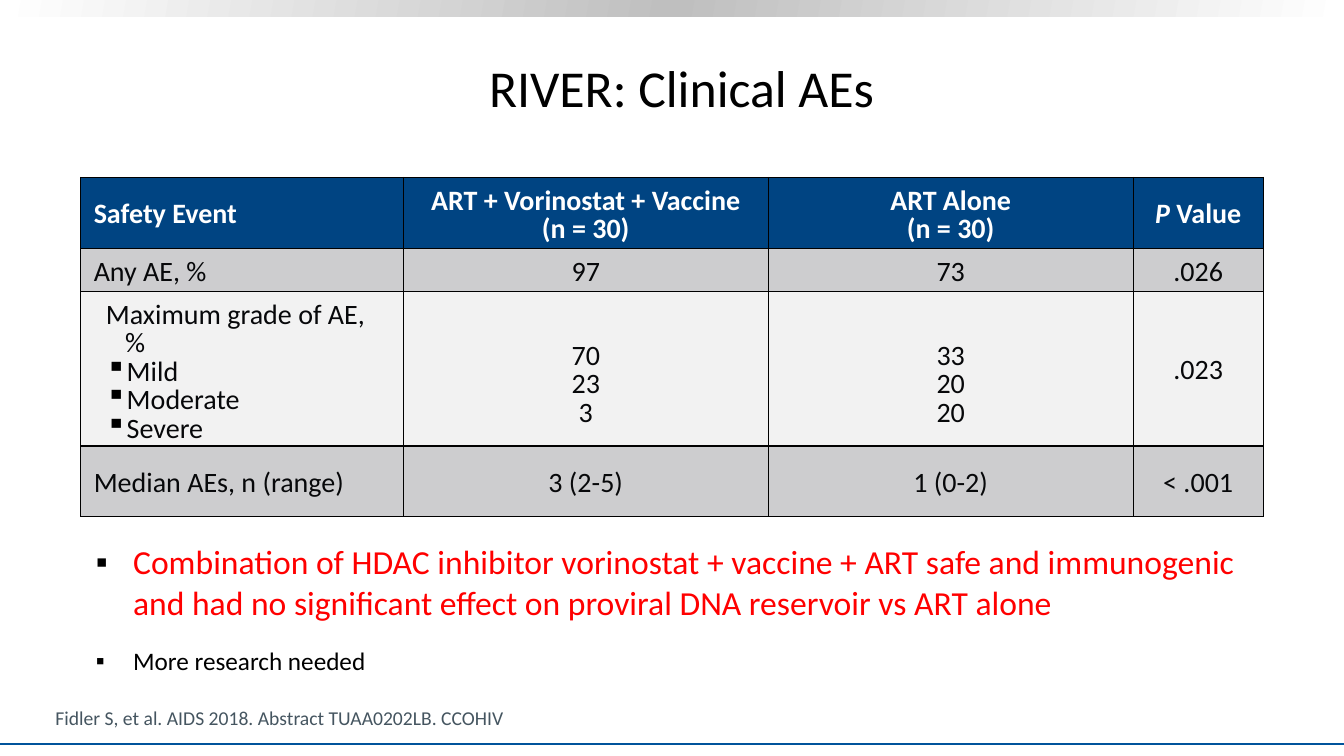
from copy import deepcopy

from lxml.etree import SubElement
from pptx import Presentation
from pptx.dml.color import RGBColor
from pptx.enum.shapes import MSO_CONNECTOR, MSO_SHAPE
from pptx.enum.text import MSO_ANCHOR, MSO_AUTO_SIZE, PP_ALIGN
from pptx.oxml.ns import qn
from pptx.util import Inches, Pt

INK = {
    "black": "000000", "white": "FFFFFF", "silver": "BFBFBF", "rule": "00539B",
    "head": "004482", "cell": "07080A", "dark": "CDCDCF", "light": "F2F2F2",
    "red": "FF0000", "slate": "455560",
}
COLS = [3.2, 3.62, 3.62, 1.29]
ROWS = [0.7, 0.42, 1.53, 0.7]
FILLS = ["head", "dark", "light", "dark"]
GRADE = 2  # row with the grades of AE
LINE = 0.28  # height of one line in the table
DATA = [
    ["Safety Event", "ART + Vorinostat + Vaccine (n = 30)", "ART Alone\n(n = 30)", "P Value"],
    ["Any AE, %", "97", "73", ".026"],
    ["Maximum grade of AE, %\nMild\nModerate\nSevere", "70\n23\n3", "33\n20\n20", ".023"],
    ["Median AEs, n (range)", "3 (2-5)", "1 (0-2)", "< .001"],
]


def color(name):
    return RGBColor.from_string(INK[name])


def put(para, text, size=20, ink="black", bold=False, italic=False,
        align=PP_ALIGN.LEFT, space=None, before=0, after=0, indent=None, bullet=False):
    """Add a run to a paragraph and format both."""
    para.alignment = align
    para.space_before, para.space_after = Pt(before), Pt(after)
    if space:
        para.line_spacing = space
    props = para._p.get_or_add_pPr()
    if indent:
        left, first = indent
        props.set("marL", str(Inches(left)))
        props.set("indent", str(Inches(first)))
    if bullet:
        tint = SubElement(props, qn("a:buClr"))
        SubElement(tint, qn("a:srgbClr")).set("val", INK["black"])
        SubElement(props, qn("a:buChar")).set("char", "▪")
    run = para.add_run()
    run.text = text
    font = run.font
    font.name, font.size, font.bold, font.italic = "Calibri", Pt(size), bold, italic
    font.color.rgb = color(ink)


def lines(frame, count):
    """Return the given number of paragraphs of a frame."""
    return [frame.paragraphs[0]] + [frame.add_paragraph() for _ in range(count - 1)]


def place(shape, box):
    shape.left, shape.top, shape.width, shape.height = map(Inches, box)


def edge(cell):
    """Draw the four borders of a cell."""
    props = cell._tc.get_or_add_tcPr()
    for spot, side in enumerate(["lnL", "lnR", "lnT", "lnB"]):
        line = SubElement(props, qn("a:" + side), w=str(Pt(0.96)))
        fill = SubElement(line, qn("a:solidFill"))
        SubElement(fill, qn("a:srgbClr")).set("val", INK["black"])
        props.insert(spot, line)


def add_bands(slide, box):
    """Gradient bar at the top and rule at the foot."""
    left, top, width, height = box
    bar = slide.shapes.add_shape(MSO_SHAPE.RECTANGLE, *map(Inches, (left, top, width, 0.16)))
    bar.shadow.inherit = False
    bar.line.fill.background()
    bar.fill.gradient()
    bar.fill.gradient_angle = 350
    stops = bar._element.spPr.find(".//" + qn("a:gsLst"))
    stops.append(deepcopy(stops[0]))
    for stop, spot, ink in zip(bar.fill.gradient_stops, [0, 0.5, 1], ["white", "silver", "white"]):
        stop.position = spot
        stop.color.rgb = color(ink)

    foot = top + height - 0.12
    rule = slide.shapes.add_connector(
        MSO_CONNECTOR.STRAIGHT, *map(Inches, (left, foot, left + width, foot)))
    rule.line.color.rgb = color("rule")
    rule.line.width = Pt(1.5)
    SubElement(rule._element.spPr, qn("a:effectLst"))


def add_title(slide, box):
    title = slide.shapes.title
    place(title, box)
    frame = title.text_frame
    frame.vertical_anchor = MSO_ANCHOR.MIDDLE
    put(frame.paragraphs[0], "RIVER: Clinical AEs", size=37, align=PP_ALIGN.CENTER)


def fill_cell(cell, text, row, col):
    cell.fill.solid()
    cell.fill.fore_color.rgb = color(FILLS[row])
    edge(cell)
    cell.vertical_anchor = MSO_ANCHOR.MIDDLE
    cell.margin_left = cell.margin_right = Inches(0.13)
    # Grade values sit one line lower, beside their labels
    drop = LINE if row == GRADE and "\n" in text and col else 0
    cell.margin_top, cell.margin_bottom = Inches(0.1 + drop), Inches(0.05)
    look = dict(ink="cell" if row else "white", bold=row == 0, space=0.83,
                align=PP_ALIGN.CENTER if col else PP_ALIGN.LEFT)
    parts = text.split("\n")
    for spot, (para, part) in enumerate(zip(lines(cell.text_frame, len(parts)), parts)):
        if part == "P Value":
            put(para, "P ", italic=True, **look)
            put(para, "Value", **look)
        elif row == GRADE and col == 0:
            put(para, part, indent=(0.31, -0.19), bullet=spot > 0, **look)
        else:
            put(para, part, **look)


def add_events(slide, box):
    """Table of safety events."""
    table = slide.shapes.add_table(len(ROWS), len(COLS), *map(Inches, box)).table
    table.first_row = table.horz_banding = False
    for col, width in zip(table.columns, COLS):
        col.width = Inches(width)
    for row, height in zip(table.rows, ROWS):
        row.height = Inches(height)
    for row, texts in enumerate(DATA):
        for col, text in enumerate(texts):
            fill_cell(table.cell(row, col), text, row, col)


def add_points(slide, box):
    body = slide.placeholders[1]
    place(body, box)
    frame = body.text_frame
    frame.auto_size = MSO_AUTO_SIZE.NONE
    look = dict(after=7, indent=(0.38, -0.37), bullet=True)
    main, more = lines(frame, 2)
    put(main, "Combination of HDAC inhibitor vorinostat + vaccine + ART safe and immunogenic "
        "and had no significant effect on proviral DNA reservoir vs ART alone",
        size=24, ink="red", **look)
    put(more, "More research needed", size=18, before=10, **look)


def add_source(slide, box):
    frame = slide.shapes.add_textbox(*map(Inches, box)).text_frame
    frame.word_wrap = True
    frame.vertical_anchor = MSO_ANCHOR.BOTTOM
    put(frame.paragraphs[0], "Fidler S, et al. AIDS 2018. Abstract TUAA0202LB. CCOHIV",
        size=14, ink="slate")


def main():
    deck = Presentation()
    deck.slide_width, deck.slide_height = Inches(13.33), Inches(7.5)
    slide = deck.slides.add_slide(deck.slide_layouts[1])
    add_bands(slide, (0, 0, 13.33, 7.5))
    add_title(slide, (0.67, 0.26, 12.18, 1.21))
    add_source(slide, (0.45, 6.95, 8.76, 0.34))
    add_events(slide, (0.8, 1.76, sum(COLS), sum(ROWS)))
    add_points(slide, (0.84, 5.32, 11.58, 1.45))
    deck.save("out.pptx")


if __name__ == "__main__":
    main()
